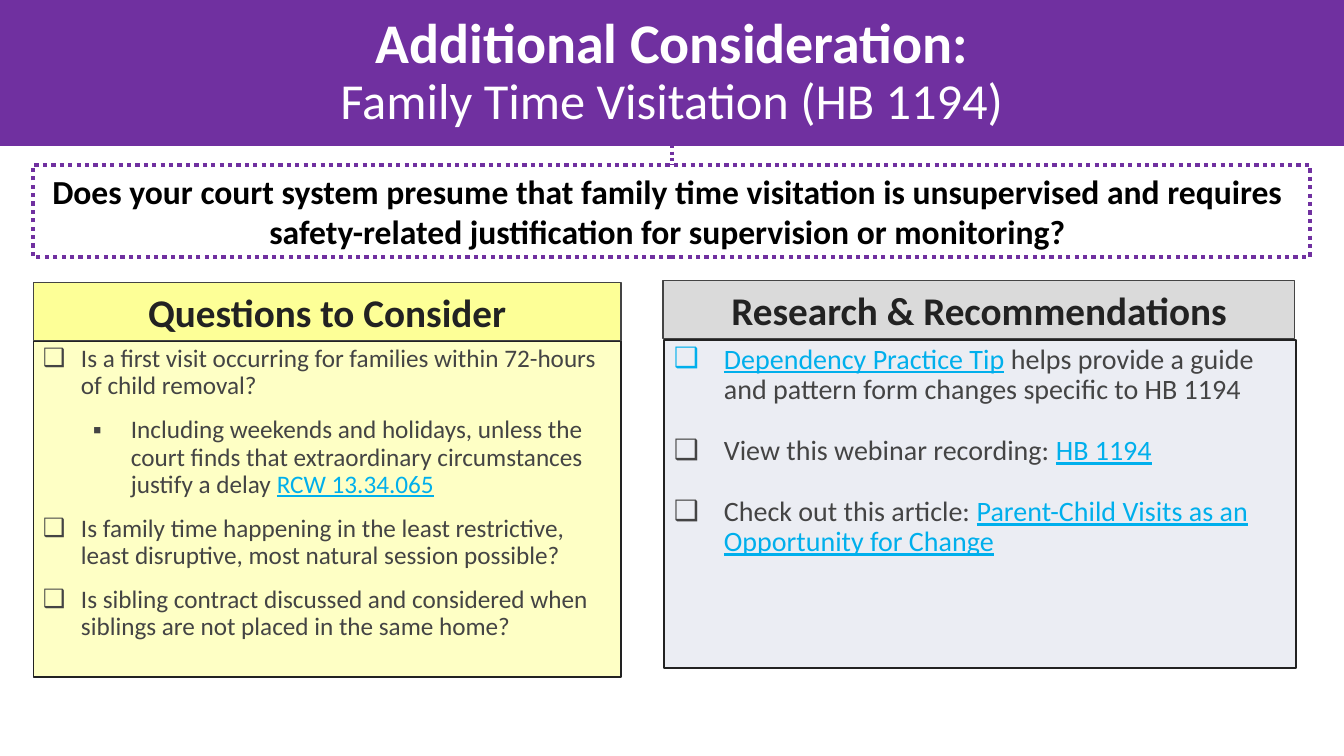
import pptx
import pptx.dml.color
import pptx.enum.dml
import pptx.enum.shapes
import pptx.enum.text
import pptx.oxml.ns
import pptx.util
from lxml import etree

COLORS = {
    "purple": "7030A0", "white": "FFFFFF", "black": "000000",
    "ink": "222222", "text": "444444", "link": "00AFEC",
    "yellow": "FDFF97", "pale_yellow": "FEFFC5",
    "gray": "DADADA", "pale_gray": "EBEDF3",
}
ALIGN = pptx.enum.text.PP_ALIGN
ANCHOR = pptx.enum.text.MSO_ANCHOR
DOTTED = pptx.enum.dml.MSO_LINE.ROUND_DOT  # sysDot


def px(n):
    return pptx.util.Emu(round(n * 914400 / 100.8))


def rgb(name):
    return pptx.dml.color.RGBColor.from_string(COLORS[name])


class SlideBuilder:
    font_name = "Calibri"

    def __init__(self, prs):
        self.s = prs.slides.add_slide(prs.slide_layouts[6])

    def line(self, ln, color, width, dash=None):
        ln.color.rgb = rgb(color)
        ln.width = pptx.util.Pt(width)
        if dash:
            ln.dash_style = dash

    def box(self, x, y, w, h, fill=None, line=None, anchor=ANCHOR.TOP):
        sp = self.s.shapes.add_shape(pptx.enum.shapes.MSO_SHAPE.RECTANGLE,
                                     px(x), px(y), px(w), px(h))
        sp.shadow.inherit = False
        if fill:
            sp.fill.solid()
            sp.fill.fore_color.rgb = rgb(fill)
        else:
            sp.fill.background()
        if line:
            self.line(sp.line, *line)
        else:
            sp.line.fill.background()
        sp.text_frame.word_wrap = True
        sp.text_frame.vertical_anchor = anchor
        return sp.text_frame

    def textbox(self, x, y, w, h):
        tf = self.s.shapes.add_textbox(px(x), px(y), px(w), px(h)).text_frame
        tf.word_wrap = True
        return tf

    def connector(self, x1, y1, x2, y2, *line):
        cx = self.s.shapes.add_connector(pptx.enum.shapes.MSO_CONNECTOR.STRAIGHT,
                                         px(x1), px(y1), px(x2), px(y2))
        self.line(cx.line, *line)
        etree.SubElement(cx._element.spPr, pptx.oxml.ns.qn("a:effectLst"))

    def run(self, p, text, size, color, **fmt):
        r = p.add_run()
        r.text = text
        fmt = {"name": self.font_name, "size": pptx.util.Pt(size), **fmt}
        for key, value in fmt.items():
            setattr(r.font, key, value)
        r.font.color.rgb = rgb(color)

    def centered(self, tf, text, size, color, **fmt):
        p = tf.paragraphs[0]
        p.alignment = ALIGN.CENTER
        self.run(p, text, size, color, **fmt)
        return p

    def bullet(self, p, char, margin, hanging):
        pPr = p._p.get_or_add_pPr()
        pPr.set("marL", str(px(margin)))
        pPr.set("indent", str(-px(hanging)))
        etree.SubElement(pPr, pptx.oxml.ns.qn("a:buFont"), typeface="Arial")
        etree.SubElement(pPr, pptx.oxml.ns.qn("a:buChar"), char=char)

    def checklist(self, tf, items, size, hanging, before, after=0):
        """Each item is (level, [(text, is_link), ...])."""
        for i, (level, parts) in enumerate(items):
            p = tf.paragraphs[0] if i == 0 else tf.add_paragraph()
            self.bullet(p, "▪" if level else "❑", hanging + 50 * level, hanging)
            fmt = {"alignment": ALIGN.LEFT, "level": level, "line_spacing": 0.9,
                   "space_before": pptx.util.Pt(before if i else 0),
                   "space_after": pptx.util.Pt(after)}
            for key, value in fmt.items():
                setattr(p, key, value)
            for text, is_link in parts:
                self.run(p, text, size, "link" if is_link else "text",
                         underline=is_link)


def main():
    prs = pptx.Presentation()
    prs.slide_width, prs.slide_height = px(1344), px(756)
    b = SlideBuilder(prs)

    # Title banner
    tf = b.box(0, 0, 1344, 146, fill="purple", anchor=ANCHOR.MIDDLE)
    p = b.centered(tf, "Additional Consideration:", 40, "white", bold=True)
    p.line_spacing = 0.9
    p.add_line_break()
    b.run(p, "Family Time Visitation (HB 1194)", 36, "white")

    # Key question in a dotted frame, tied to the banner
    b.box(33, 165, 1277, 92, line=("purple", 3, DOTTED))
    b.connector(672, 139, 672, 165, "purple", 2.25, DOTTED)
    b.centered(b.textbox(25, 166, 1285, 92),
               "Does your court system presume that family time visitation is "
               "unsupervised and requires safety-related justification for "
               "supervision or monitoring?", 24, "black", bold=True)

    # Panel bodies
    questions = b.box(33, 341, 588, 336, "pale_yellow", ("ink", 0.75))
    b.checklist(questions, [
        (0, [("Is a first visit occurring for families within 72-hours of "
              "child removal?", False)]),
        (1, [("Including weekends and holidays, unless the court finds that "
              "extraordinary circumstances justify a delay ", False),
             ("RCW 13.34.065", True)]),
        (0, [("Is family time happening in the least restrictive, least "
              "disruptive, most natural session possible?", False)]),
        (0, [("Is sibling contract discussed and considered when siblings are "
              "not placed in the same home?", False)]),
    ], size=18, hanging=38, before=12)

    research = b.box(664, 340, 632, 328, "pale_gray", ("ink", 1))
    b.checklist(research, [
        (0, [("Dependency Practice Tip", True),
             (" helps provide a guide and pattern form changes specific to "
              "HB 1194", False)]),
        (0, [("View this webinar recording: ", False), ("HB 1194", True)]),
        (0, [("Check out this article: ", False),
             ("Parent-Child Visits as an Opportunity for Change", True)]),
    ], size=20, hanging=50, before=10, after=12)

    # Panel headings
    for text, x, y, w, fill in [
        ("Questions to Consider", 33, 283, 588, "yellow"),
        ("Research & Recommendations", 663, 281, 632, "gray"),
    ]:
        tf = b.box(x, y, w, 58, fill, ("text", 0.75))
        b.centered(tf, text, 28, "ink", bold=True)

    prs.save("out.pptx")


if __name__ == "__main__":
    main()
